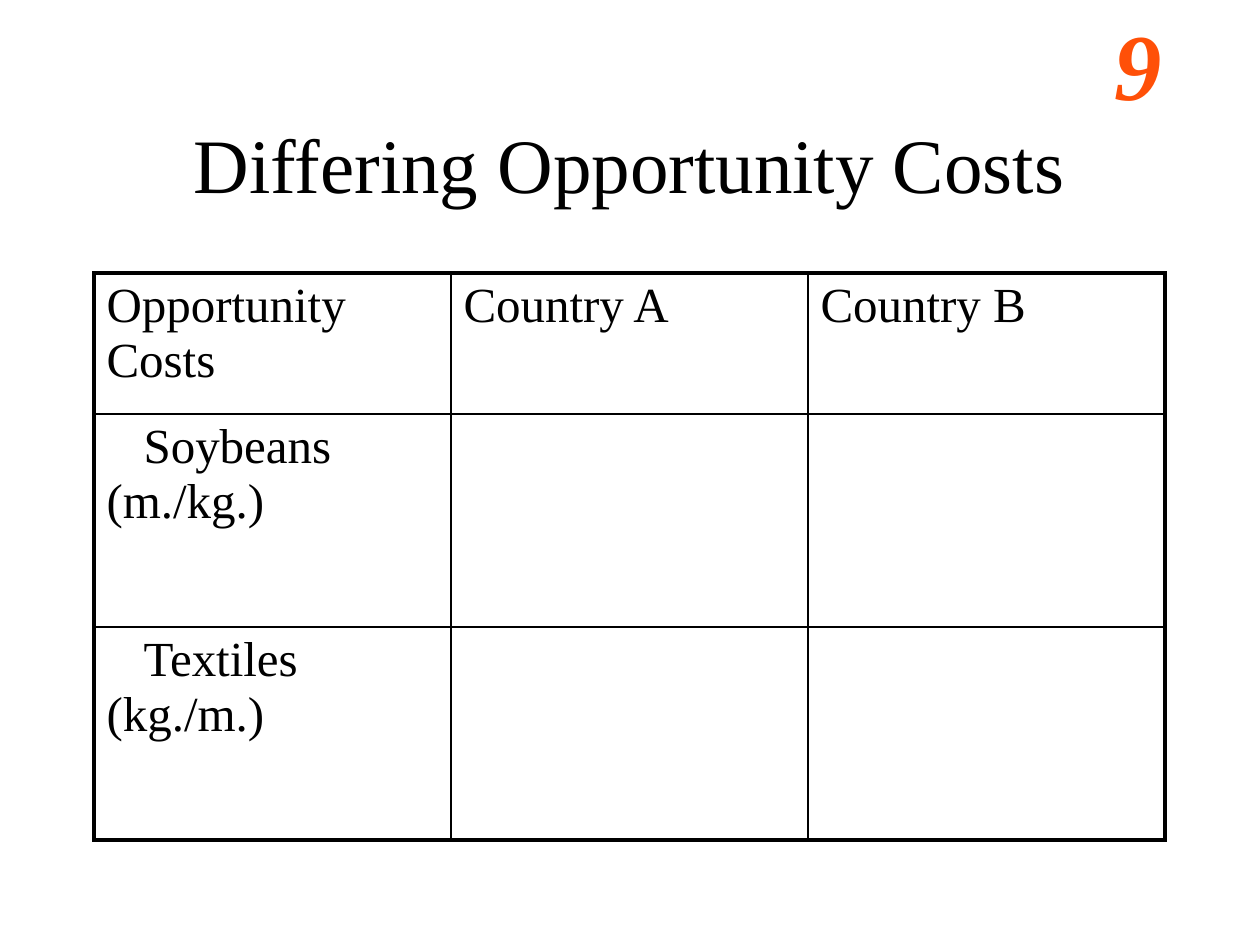
from lxml.etree import SubElement
from pptx import Presentation
from pptx.dml.color import RGBColor
from pptx.enum.text import MSO_ANCHOR, PP_ALIGN
from pptx.oxml.ns import qn
from pptx.util import Emu, Inches, Pt

TITLE = "Differing Opportunity Costs"
PAGE_NUMBER = "9"
# "\v" is a line break inside a paragraph
ROWS = [
    ("Opportunity Costs", "Country A", "Country B"),
    ("Soybeans\v(m./kg.)", "", ""),
    ("Textiles (kg./m.)", "", ""),
]
COLUMN_WIDTH = 357
ROW_HEIGHTS = (141, 213, 213)
GOODS_INDENT = 37
INNER_LINE, OUTER_LINE = 1, 2.25

FONT = "Times New Roman"
BLACK = RGBColor(0x00, 0x00, 0x00)
ORANGE = RGBColor(0xFF, 0x50, 0x08)


def px(count):
    return Emu(round(count * 914400 / 126))


def set_font(paragraph, size, color=BLACK):
    font = paragraph.font
    font.name, font.size, font.color.rgb = FONT, Pt(size), color


def add_borders(cell, widths):
    """Draw black cell borders; widths are points, by side L, R, T, B."""
    properties = cell._tc.get_or_add_tcPr()
    for position, (side, width) in enumerate(widths.items()):
        line = properties.makeelement(qn(f"a:ln{side}"), {"w": str(Pt(width))})
        fill = SubElement(line, qn("a:solidFill"))
        SubElement(fill, qn("a:srgbClr"), val=str(BLACK))
        properties.insert(position, line)


def add_title(slide):
    title = slide.shapes.title
    title.left, title.top, title.width, title.height = map(px, (94, 84, 1071, 158))
    frame = title.text_frame
    frame.text = TITLE
    frame.vertical_anchor = MSO_ANCHOR.MIDDLE
    heading = frame.paragraphs[0]
    heading.alignment = PP_ALIGN.CENTER
    set_font(heading, 44)


def add_page_number(slide):
    frame = slide.shapes.add_textbox(*map(px, (1102, 0, 148, 126))).text_frame
    frame.word_wrap = False
    number = frame.paragraphs[0]
    number.text = PAGE_NUMBER
    number.alignment = PP_ALIGN.LEFT
    set_font(number, 54, ORANGE)
    number.font.bold = number.font.italic = True


def add_cost_table(slide):
    last_row, last_column = len(ROWS) - 1, len(ROWS[0]) - 1
    size = (COLUMN_WIDTH * len(ROWS[0]), sum(ROW_HEIGHTS))
    table = slide.shapes.add_table(
        len(ROWS), len(ROWS[0]), *map(px, (94, 273, *size))).table
    table.first_row = table.horz_banding = False
    for column in table.columns:
        column.width = px(COLUMN_WIDTH)
    for r, (texts, height) in enumerate(zip(ROWS, ROW_HEIGHTS)):
        table.rows[r].height = px(height)
        for c, text in enumerate(texts):
            cell = table.cell(r, c)
            cell.fill.background()
            paragraph = cell.text_frame.paragraphs[0]
            paragraph.text = text
            set_font(paragraph, 28)
            if r > 0 and c == 0:
                paragraph._p.get_or_add_pPr().set("indent", str(px(GOODS_INDENT)))
            on_edge = {"L": c == 0, "R": c == last_column,
                       "T": r == 0, "B": r == last_row}
            add_borders(cell, {side: OUTER_LINE if edge else INNER_LINE
                               for side, edge in on_edge.items()})


def main():
    deck = Presentation()
    deck.slide_width, deck.slide_height = Inches(10), Inches(7.5)
    slide = deck.slides.add_slide(deck.slide_layouts[5])
    add_page_number(slide)
    add_title(slide)
    add_cost_table(slide)
    deck.save("out.pptx")


if __name__ == "__main__":
    main()
